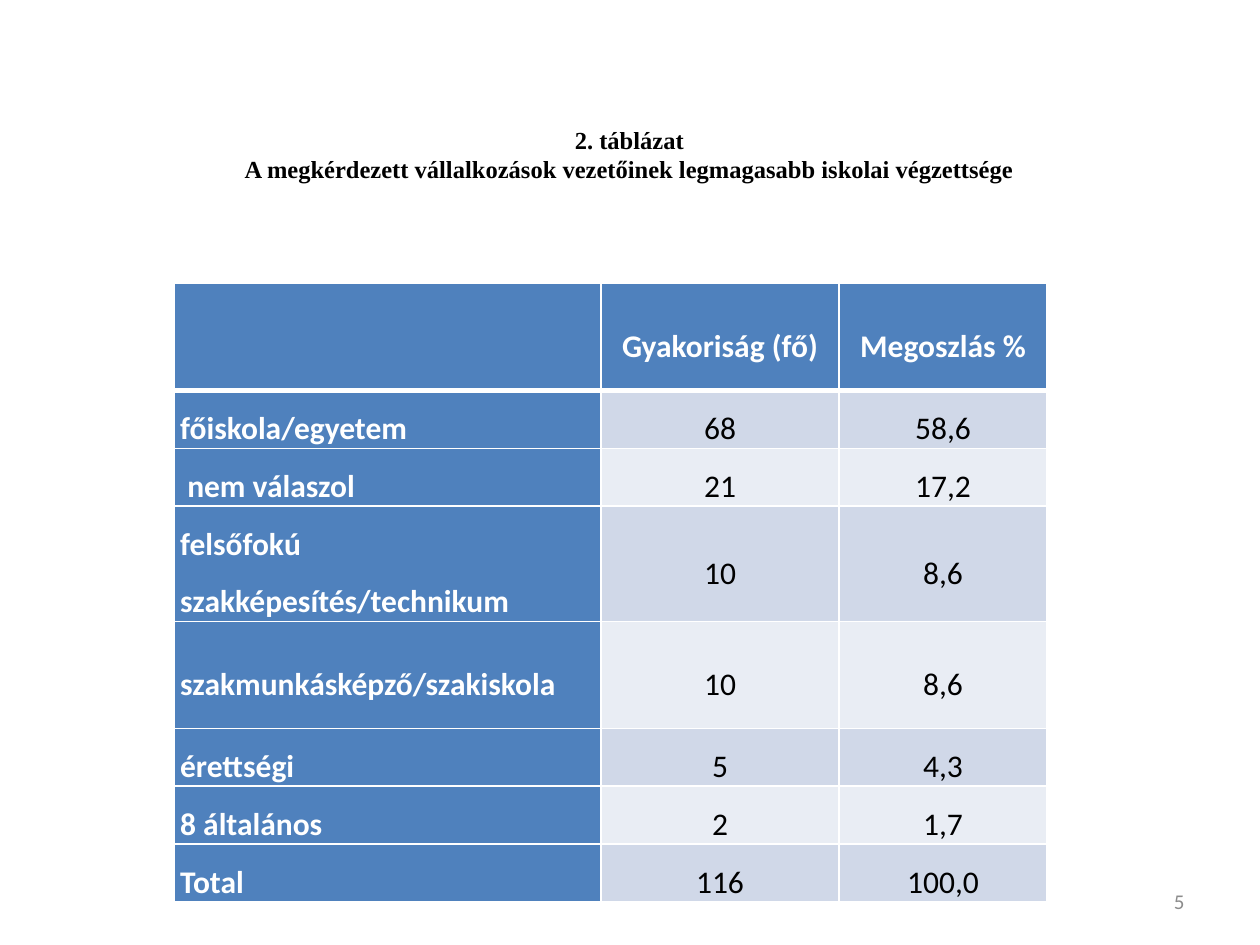
from dataclasses import dataclass

from lxml.etree import SubElement
from pptx import Presentation
from pptx.dml.color import RGBColor
from pptx.enum.text import MSO_ANCHOR, MSO_AUTO_SIZE, PP_ALIGN
from pptx.oxml.ns import qn
from pptx.util import Inches, Pt

COLORS = {
    "header": "4F81BD",
    "odd": "D0D8E8",
    "even": "E9EDF4",
    "white": "FFFFFF",
    "black": "000000",
    "grey": "8C8C8C",
}
TITLE_LINES = [
    "2. táblázat",
    "A megkérdezett vállalkozások vezetőinek legmagasabb iskolai végzettsége",
]
COLUMN_WIDTHS = [3.39, 1.89, 1.65]
ROW_HEIGHT, TALL_ROW_HEIGHT = 0.4, 0.85


@dataclass
class Row:
    label: str
    frequency: str
    share: str
    height: float = ROW_HEIGHT


ROWS = [
    Row("", "Gyakoriság (fő)", "Megoszlás %", TALL_ROW_HEIGHT),
    Row("főiskola/egyetem", "68", "58,6"),
    Row(" nem válaszol", "21", "17,2"),
    Row("felsőfokú szakképesítés/technikum", "10", "8,6", TALL_ROW_HEIGHT),
    Row("szakmunkásképző/szakiskola", "10", "8,6", TALL_ROW_HEIGHT),
    Row("érettségi", "5", "4,3"),
    Row("8 általános", "2", "1,7"),
    Row("Total", "116", "100,0"),
]


def set_font(para, name: str, size: int, color: str, bold: bool = False) -> None:
    font = para.font
    font.name, font.size, font.bold = name, Pt(size), bold
    font.color.rgb = RGBColor.from_string(COLORS[color])


def set_borders(cell, widths: dict[str, int]) -> None:
    properties = cell._tc.get_or_add_tcPr()
    for side in ("L", "R", "T", "B"):
        line = SubElement(properties, qn(f"a:ln{side}"), w=str(Pt(widths.get(side, 1))))
        fill = SubElement(line, qn("a:solidFill"))
        SubElement(fill, qn("a:srgbClr"), val=COLORS["white"])


def fill_cell(cell, text: str, row: int, column: int) -> None:
    is_heading = row == 0 or column == 0
    # The header row is closed by a thick line
    set_borders(cell, {0: {"B": 3}, 1: {"T": 3}}.get(row, {}))
    cell.fill.solid()
    shade = "header" if is_heading else "odd" if row % 2 else "even"
    cell.fill.fore_color.rgb = RGBColor.from_string(COLORS[shade])
    cell.vertical_anchor = MSO_ANCHOR.MIDDLE
    cell.margin_left = cell.margin_right = Inches(0.05)
    cell.margin_top = cell.margin_bottom = 0
    cell.text = text
    para = cell.text_frame.paragraphs[0]
    para.alignment = PP_ALIGN.CENTER if column else PP_ALIGN.LEFT
    para.line_spacing = 1.5
    set_font(para, "Calibri", 18, "white" if is_heading else "black", is_heading)


def add_education_table(page) -> None:
    frame = page.shapes.add_table(
        len(ROWS), len(COLUMN_WIDTHS), Inches(1.38), Inches(2.25),
        Inches(sum(COLUMN_WIDTHS)), Inches(sum(row.height for row in ROWS)),
    )
    table = frame.table
    table.first_col = True
    for column, width in zip(table.columns, COLUMN_WIDTHS):
        column.width = Inches(width)
    for row_index, row in enumerate(ROWS):
        table.rows[row_index].height = Inches(row.height)
        for column_index, text in enumerate((row.label, row.frequency, row.share)):
            fill_cell(table.cell(row_index, column_index), text, row_index, column_index)


def set_title(page) -> None:
    title = page.shapes.title
    title.left, title.top = Inches(1.82), Inches(0.94)
    title.width, title.height = Inches(6.35), Inches(0.81)
    frame = title.text_frame
    frame.text = "\n".join(TITLE_LINES)
    frame.word_wrap = False
    frame.auto_size = MSO_AUTO_SIZE.NONE
    frame.vertical_anchor = MSO_ANCHOR.TOP
    for para in frame.paragraphs:
        para.alignment = PP_ALIGN.CENTER
        set_font(para, "Times New Roman", 14, "black", True)


def add_page_number(page, number: str) -> None:
    box = page.shapes.add_textbox(Inches(7.17), Inches(6.95), Inches(2.33), Inches(0.4))
    frame = box.text_frame
    frame.word_wrap = True
    frame.vertical_anchor = MSO_ANCHOR.MIDDLE
    para = frame.paragraphs[0]
    para.text = number
    para.alignment = PP_ALIGN.RIGHT
    set_font(para, "Calibri", 12, "grey")


def main() -> None:
    deck = Presentation()
    deck.slide_width, deck.slide_height = Inches(10), Inches(7.5)
    page = deck.slides.add_slide(deck.slide_layouts.get_by_name("Title Only"))
    set_title(page)
    add_education_table(page)
    add_page_number(page, "5")
    deck.save("out.pptx")


if __name__ == "__main__":
    main()
